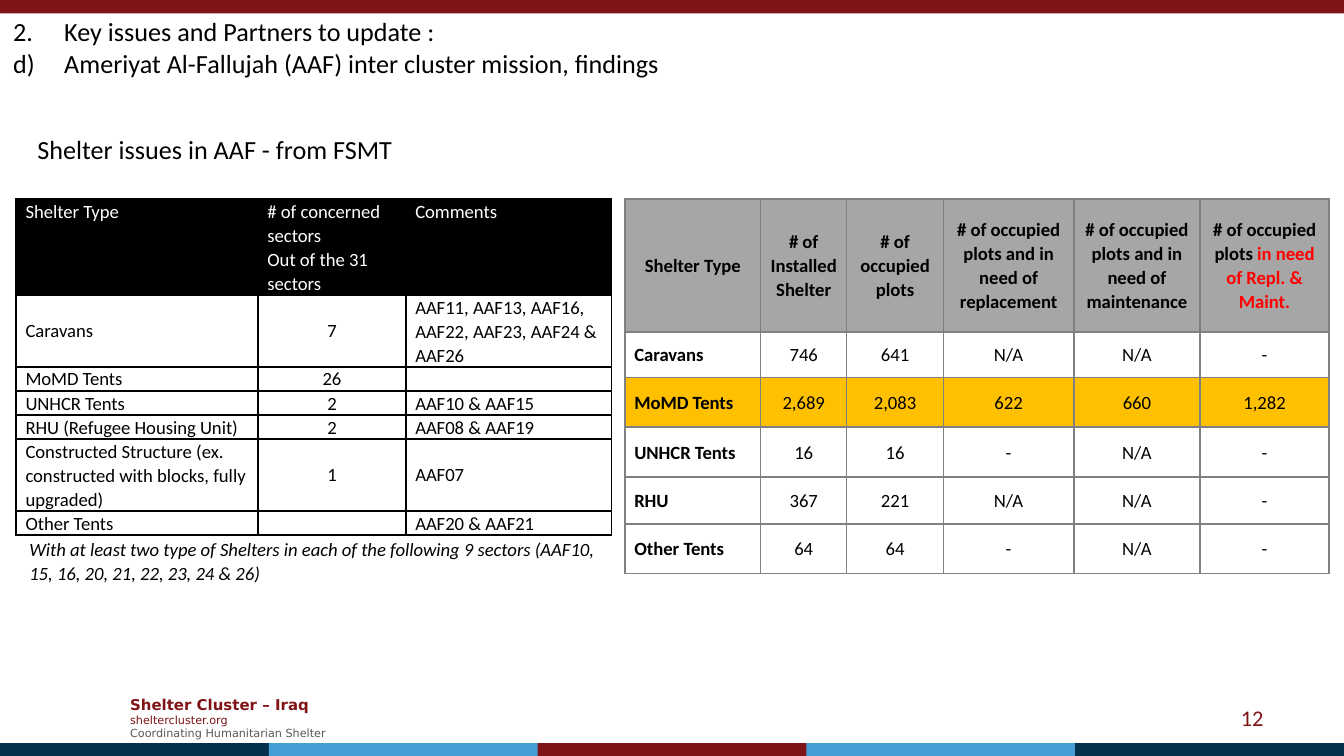
from lxml import etree
from pptx import Presentation
from pptx import util as u
from pptx.dml.color import RGBColor
from pptx.enum import shapes, text
from pptx.oxml.ns import qn

W = 10
H = W * 9 / 16
BAR_H = 0.1
COLORS = {"maroon": "7F1416", "navy": "04314C", "sky": "459FD5", "black": "000000",
          "white": "FFFFFF", "gray": "595959", "head": "A6A6A6", "rule": "808080",
          "amber": "FFC000", "red": "FF0000"}
LEFT, CENTER, RIGHT = text.PP_ALIGN.LEFT, text.PP_ALIGN.CENTER, text.PP_ALIGN.RIGHT
TOP, MIDDLE = text.MSO_ANCHOR.TOP, text.MSO_ANCHOR.MIDDLE

SECTORS = [
    ["Shelter Type", "# of concerned sectors\nOut of the 31 sectors", "Comments"],
    ["Caravans", "7", "AAF11, AAF13, AAF16, AAF22, AAF23, AAF24 & AAF26"],
    ["MoMD Tents", "26", ""],
    ["UNHCR Tents", "2", "AAF10 & AAF15"],
    ["RHU (Refugee Housing Unit)", "2", "AAF08 & AAF19"],
    ["Constructed Structure (ex. constructed with blocks, fully upgraded)", "1", "AAF07"],
    ["Other Tents", "", "AAF20 & AAF21"],
]
PLOTS = [
    ["Shelter Type", "# of Installed Shelter", "# of occupied plots",
     "# of occupied plots and in need of replacement",
     "# of occupied plots and in need of maintenance", "# of occupied plots "],
    ["Caravans", "746", "641", "N/A", "N/A", "-"],
    ["MoMD Tents", "2,689", "2,083", "622", "660", "1,282"],
    ["UNHCR Tents", "16", "16", "-", "N/A", "-"],
    ["RHU", "367", "221", "N/A", "N/A", "-"],
    ["Other Tents", "64", "64", "-", "N/A", "-"],
]


def rgb(name):
    return RGBColor.from_string(COLORS[name])


def add_run(p, words, size, color="black", bold=False, italic=False, font="Calibri"):
    r = p.add_run()
    r.text = words
    f = r.font
    f.name, f.size, f.bold, f.italic = font, u.Pt(size), bold, italic
    f.color.rgb = rgb(color)


def add_lines(p, words, size, **style):
    """Add one run per line, with line breaks between."""
    for i, line in enumerate(words.split("\n")):
        if i:
            p.add_line_break()
        add_run(p, line, size, **style)


def add_bar(s, x, y, w, color):
    sp = s.shapes.add_shape(shapes.MSO_SHAPE.RECTANGLE, u.Inches(x), u.Inches(y),
                            u.Inches(w), u.Inches(BAR_H))
    sp.shadow.inherit = False
    sp.fill.solid()
    sp.fill.fore_color.rgb = rgb(color)
    sp.line.fill.background()


def add_text(s, box, lines, anchor=TOP, align=LEFT, spacing=None):
    """Add a text box; each line is (words, run style)."""
    tf = s.shapes.add_textbox(*map(u.Inches, box)).text_frame
    tf.word_wrap = True
    tf.vertical_anchor = anchor
    for i, (words, style) in enumerate(lines):
        p = tf.add_paragraph() if i else tf.paragraphs[0]
        p.alignment = align
        if spacing:
            p.line_spacing = spacing
        add_run(p, words, **style)
    return tf


def number_paragraph(p, scheme, start):
    pPr = p._p.get_or_add_pPr()
    indent = u.Inches(0.38)
    pPr.set("marL", str(indent))
    pPr.set("indent", str(-indent))
    etree.SubElement(pPr, qn("a:buFont"), typeface="+mj-lt")
    etree.SubElement(pPr, qn("a:buAutoNum"), type=scheme, startAt=str(start))


def set_borders(cell, color):
    tcPr = cell._tc.get_or_add_tcPr()
    for side in ("lnL", "lnR", "lnT", "lnB"):
        ln = etree.SubElement(tcPr, qn("a:" + side), w=str(u.Pt(1)))
        fill = etree.SubElement(ln, qn("a:solidFill"))
        etree.SubElement(fill, qn("a:srgbClr"), val=COLORS[color])


def fill_cell(cell, words, align, anchor, fill, border, **style):
    set_borders(cell, border)
    if fill:
        cell.fill.solid()
        cell.fill.fore_color.rgb = rgb(fill)
    else:
        cell.fill.background()
    cell.margin_left = cell.margin_right = u.Inches(0.07)
    cell.margin_top = cell.margin_bottom = 0
    cell.vertical_anchor = anchor
    p = cell.text_frame.paragraphs[0]
    p.alignment, p.line_spacing = align, 1.07
    if words:
        add_lines(p, words, 10, **style)
    else:
        etree.SubElement(p._p, qn("a:endParaRPr"), sz="1000")


def add_grid(s, x, y, cols, rows, data, cell_style):
    """Add a table; cell_style(row, col) gives the look of each cell."""
    t = s.shapes.add_table(len(rows), len(cols), u.Inches(x), u.Inches(y),
                           u.Inches(sum(cols)), u.Inches(sum(rows))).table
    t.first_row = t.horz_banding = False
    for c, w in enumerate(cols):
        t.columns[c].width = u.Inches(w)
    for r, h in enumerate(rows):
        t.rows[r].height = u.Inches(h)
        for c, words in enumerate(data[r]):
            fill_cell(t.cell(r, c), words, **cell_style(r, c))
    return t


def sector_style(r, c):
    head = r == 0
    return dict(align=CENTER if c == 1 and not head else LEFT,
                anchor=TOP if head else MIDDLE, fill="black" if head else None,
                border="black", color="white" if head else "black")


def plot_style(r, c):
    return dict(align=LEFT if c == 0 and r else CENTER, anchor=MIDDLE,
                fill={0: "head", 2: "amber"}.get(r), border="rule",
                bold=r == 0 or c == 0)


def add_frame(s):
    """Add the top and bottom bars, the footer and the page number."""
    add_bar(s, 0, 0, W, "maroon")
    bar_w = 2.01
    for i, color in enumerate(["navy", "sky", "maroon", "sky", "navy"]):
        add_bar(s, i * (W + 0.01 - bar_w) / 4, 5.53, bar_w, color)
    small = dict(size=6, font="DejaVu Sans")
    add_text(s, (0.87, 5.12, 1.73, 0.44), [
        ("Shelter Cluster – Iraq",
         dict(size=8, font="DejaVu Sans", color="maroon", bold=True)),
        ("sheltercluster.org", dict(small, color="maroon")),
        ("Coordinating Humanitarian Shelter", dict(small, color="gray")),
    ], MIDDLE)
    add_text(s, (7.17, 5.19, 2.33, 0.3), [("12", dict(size=12, color="maroon"))],
             MIDDLE, RIGHT)


def main():
    prs = Presentation()
    prs.slide_width, prs.slide_height = u.Inches(W), u.Inches(H)
    s = prs.slides.add_slide(prs.slide_layouts[6])
    add_frame(s)

    heading = dict(size=14)
    tf = add_text(s, (0, 0.15, W, 0.4), [
        ("Key issues and Partners to update :", heading),
        ("Ameriyat Al-Fallujah (AAF) inter cluster mission, findings", heading),
    ], MIDDLE)
    number_paragraph(tf.paragraphs[0], "arabicPeriod", 2)
    number_paragraph(tf.paragraphs[1], "alphaLcParenR", 4)
    add_text(s, (0.18, 0.94, 9.65, 0.34), [("Shelter issues in AAF - from FSMT", heading)])

    add_grid(s, 0.12, 1.48, [1.8, 1.1, 1.53],
             [0.64, 0.47, 0.17, 0.15, 0.15, 0.47, 0.18], SECTORS, sector_style)
    plots = add_grid(s, 4.65, 1.48, [1.01, 0.64, 0.72, 0.97, 0.94, 0.96],
                     [0.99, 0.34, 0.37, 0.37, 0.35, 0.37], PLOTS, plot_style)
    add_run(plots.cell(0, 5).text_frame.paragraphs[0], "in need of Repl. & Maint.",
            10, "red", bold=True)
    add_text(s, (0.12, 3.94, 4.44, 0.45), [
        ("With at least two type of Shelters in each of the following 9 sectors "
         "(AAF10, 15, 16, 20, 21, 22, 23, 24 & 26)", dict(size=10, italic=True)),
    ], spacing=1.07)
    prs.save("out.pptx")


if __name__ == "__main__":
    main()
